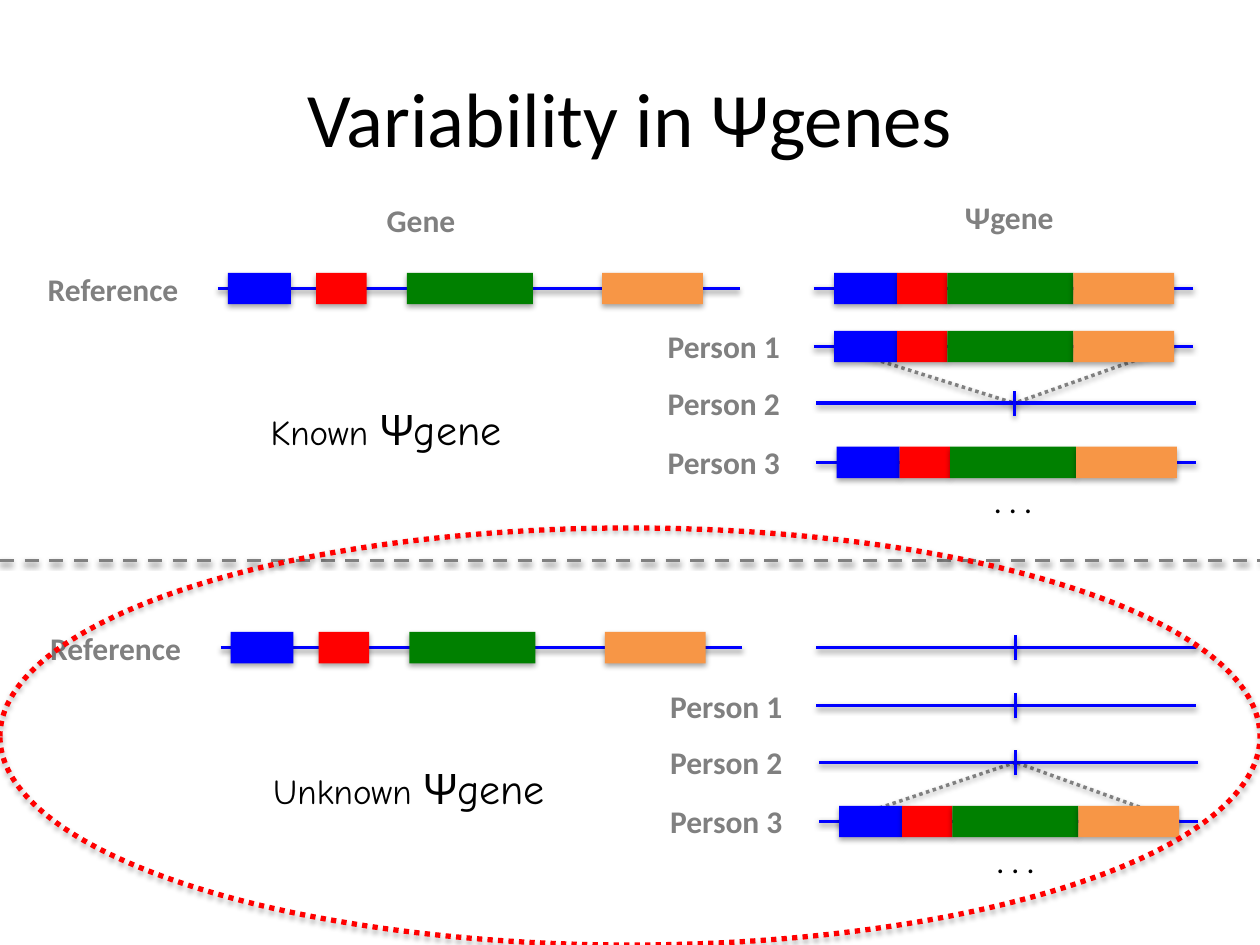
from pptx import Presentation
from pptx import util as u
from pptx.dml.color import RGBColor
from pptx.enum import dml, shapes, text

BLUE, RED, GREEN, ORANGE = "0000FF", "FF0000", "008000", "F79646"
GRAY, BLACK = "808080", "000000"
Inches, Pt = u.Inches, u.Pt
color = RGBColor.from_string

presentation = Presentation()
presentation.slide_width, presentation.slide_height = Inches(10), Inches(7.5)
slide = presentation.slides.add_slide(presentation.slide_layouts[6])


def add_line(x1, y1, x2, y2, hex_color=BLUE, dash=None):
    # Lines and boxes keep the soft shadow of the theme
    line = slide.shapes.add_connector(
        shapes.MSO_CONNECTOR.STRAIGHT, Inches(x1), Inches(y1), Inches(x2), Inches(y2))
    line.line.color.rgb = color(hex_color)
    line.line.width = Pt(2)
    if dash:
        line.line.dash_style = dash
    return line


def add_label(left, top, width, height, runs, hex_color=GRAY, bold=True, font="Calibri"):
    box = slide.shapes.add_textbox(Inches(left), Inches(top), Inches(width), Inches(height))
    box.text_frame.word_wrap = False
    box.text_frame.auto_size = text.MSO_AUTO_SIZE.SHAPE_TO_FIT_TEXT
    paragraph = box.text_frame.paragraphs[0]
    paragraph.font.name = font
    paragraph.font.bold = bold
    paragraph.font.color.rgb = color(hex_color)
    for words, size in runs:
        run = paragraph.add_run()
        run.text = words
        run.font.size = Pt(size)
    return box


# Title
title = add_label(0.5, 0.3, 9, 1.25, [("Variability in Ψgenes", 44)], BLACK, False)
title.text_frame.auto_size = text.MSO_AUTO_SIZE.NONE
title.text_frame.word_wrap = True
title.text_frame.vertical_anchor = text.MSO_ANCHOR.MIDDLE
title.text_frame.paragraphs[0].alignment = text.PP_ALIGN.CENTER

# Column headings
add_label(2.97, 1.55, 0.75, 0.4, [("Gene", 18)])
add_label(7.56, 1.52, 0.92, 0.4, [("Ψgene", 18)])

# Exons: colour, width, left in the gene, offset in the pseudogene
exons = [(BLUE, 0.5, 1.81, 0), (RED, 0.4, 2.51, 0.5),
         (GREEN, 1, 3.23, 0.9), (ORANGE, 0.8, 4.78, 1.9)]
exon_height = 0.25
row_centers = [2.29, 2.75, 3.2, 3.67]
row_lefts = [6.46, 6.46, 6.48, 6.48]
row_names = ["Reference", "Person 1", "Person 2", "Person 3"]
insertion_row = 2

# Sections: name, width, shift, rows with the pseudogene, row joined to the insertion point
sections = [("Known ", 2.04, 0, 0, {0, 1, 3}, 1),
            ("Unknown ", 2.37, 0.02, 2.85, {3}, 3)]

for name, name_width, shift_x, shift_y, present_rows, joined_row in sections:
    # Dotted lines behind the rows, joined to the exons below
    insertion_x, insertion_y = 8.05 + shift_x / 2, row_centers[insertion_row] + shift_y
    joined_y = row_centers[joined_row] + shift_y
    dotted = [add_line(x + shift_x, joined_y, insertion_x, insertion_y, GRAY,
                       dml.MSO_LINE.ROUND_DOT) for x in (6.62, 9.32)]

    # Reference gene, with gaps between the exons
    center = row_centers[0] + shift_y
    add_line(1.73 + shift_x, center, 5.87 + shift_x, center)
    boxes = [(hex_color, width, left + shift_x, center)
             for hex_color, width, left, _ in exons]

    # Pseudogene rows: joined exons, or a tick where they are absent
    joined_boxes = []
    for row, (row_name, row_left, row_center) in enumerate(zip(row_names, row_lefts, row_centers)):
        left, center = row_left + shift_x, row_center + shift_y
        add_line(left, center, left + 3.01, center)
        if row in present_rows:
            boxes += [(hex_color, width, left + 0.16 + offset, center)
                      for hex_color, width, _, offset in exons]
        else:
            add_line(insertion_x, center + 0.1, insertion_x, center - 0.1)
        label_left, label_width = (0.28, 1.27) if row == 0 else (5.2, 1.11)
        add_label(label_left + shift_x, center - 0.2, label_width, 0.4, [(row_name, 18)])

    for hex_color, width, left, center in boxes:
        exon = slide.shapes.add_shape(
            shapes.MSO_SHAPE.RECTANGLE, Inches(left), Inches(center - exon_height / 2),
            Inches(width), Inches(exon_height))
        exon.fill.solid()
        exon.fill.fore_color.rgb = color(hex_color)
        exon.line.fill.background()
        if center == joined_y:
            joined_boxes.append(exon)
    dotted[0].begin_connect(joined_boxes[0], 1)
    dotted[1].begin_connect(joined_boxes[-1], 3)

    # Ellipsis and section name
    add_label(7.79 + shift_x, 3.78 + shift_y, 0.51, 0.4, [(". . .", 18)], BLACK, False)
    add_label(2.05 + shift_x, 3.15 + shift_y, name_width, 0.5,
              [(name, 20), ("Ψgene", 24)], BLACK, False, "Comic Neue")

# Divider between the sections
add_line(0, 4.45, 10, 4.45, GRAY, dml.MSO_LINE.DASH)

# Dotted ellipse around the unknown section
ellipse = slide.shapes.add_shape(
    shapes.MSO_SHAPE.OVAL, Inches(0), Inches(4.19), Inches(10), Inches(3.31))
ellipse.fill.background()
ellipse.line.color.rgb = color(RED)
ellipse.line.width = Pt(3)
ellipse.line.dash_style = dml.MSO_LINE.ROUND_DOT

presentation.save("out.pptx")
